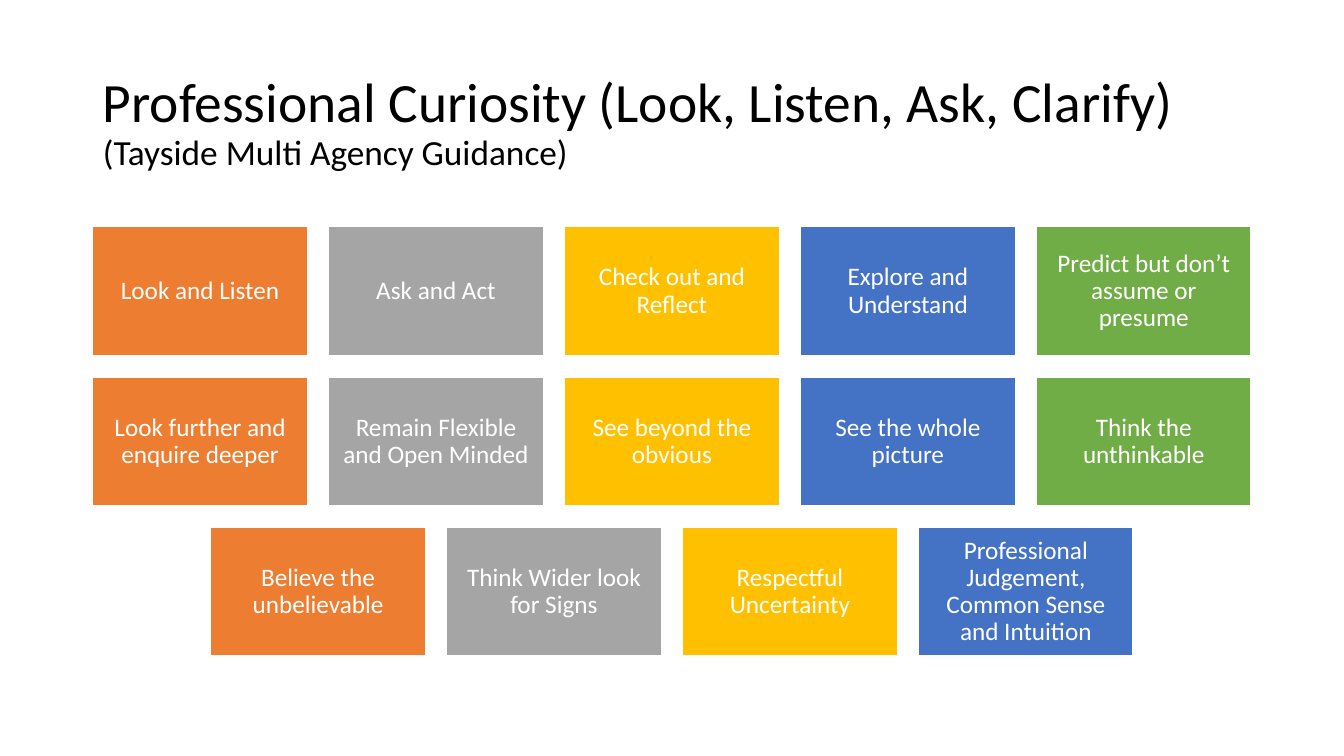
from copy import deepcopy

from pptx import Presentation
from pptx import util as u
from pptx.dml.color import RGBColor
from pptx.enum import shapes, text
from pptx.oxml.ns import qn

THEME = {
    "font": "Calibri",
    "ink": "000000",
    "paper": "FFFFFF",
    "columns": ["ED7D31", "A5A5A5", "FFC000", "4472C4", "70AD47"],
    "title": 39.6,
    "subtitle": 25.2,
    "card": 18,
}

ROWS = [
    ["Look and Listen", "Ask and Act", "Check out and Reflect",
     "Explore and Understand", "Predict but don’t assume or presume"],
    ["Look further and enquire deeper", "Remain Flexible and Open Minded",
     "See beyond the obvious", "See the whole picture", "Think the unthinkable"],
    ["Believe the unbelievable", "Think Wider look for Signs",
     "Respectful Uncertainty", "Professional Judgement, Common Sense and Intuition"],
]

LEFT, TOP = 0.92, 2.25
CARD_W, CARD_H = 2.13, 1.28
STEP_X, STEP_Y = 2.34, 1.49


def add_run(p, words, size, colour):
    r = p.add_run()
    r.text = words
    for name, value in {"name": THEME["font"], "size": u.Pt(size)}.items():
        setattr(r.font, name, value)
    r.font.color.rgb = RGBColor.from_string(colour)
    return r


def place(sp, **box):
    for name, value in box.items():
        setattr(sp, name, u.Inches(value))


prs = Presentation()
place(prs, slide_width=13.33, slide_height=7.5)
s = prs.slides.add_slide(prs.slide_layouts[5])

title = s.shapes.title
place(title, left=LEFT, top=0.61, width=11.5, height=1.24)
tf = title.text_frame
for name, value in {"auto_size": text.MSO_AUTO_SIZE.NONE, "word_wrap": True,
                    "vertical_anchor": text.MSO_ANCHOR.MIDDLE}.items():
    setattr(tf, name, value)
p = tf.paragraphs[0]
p.alignment = text.PP_ALIGN.LEFT
p.line_spacing = 0.9
r = add_run(p, "Professional Curiosity (Look, Listen, Ask, Clarify)", THEME["title"], THEME["ink"])
p.add_line_break()
p._p.find(qn("a:br")).append(deepcopy(r._r.rPr))
add_run(p, "(Tayside Multi Agency Guidance)", THEME["subtitle"], THEME["ink"])

for row, labels in enumerate(ROWS):
    indent = (len(THEME["columns"]) - len(labels)) / 2
    for col, (label, colour) in enumerate(zip(labels, THEME["columns"])):
        sp = s.shapes.add_shape(shapes.MSO_SHAPE.RECTANGLE, 0, 0, 0, 0)
        place(sp, left=LEFT + (indent + col) * STEP_X, top=TOP + row * STEP_Y,
              width=CARD_W, height=CARD_H)
        sp.shadow.inherit = False
        sp.fill.solid()
        sp.fill.fore_color.rgb = RGBColor.from_string(colour)
        sp.line.color.rgb = RGBColor.from_string(THEME["paper"])
        sp.line.width = u.Pt(1)
        tf = sp.text_frame
        place(tf, margin_left=0.07, margin_top=0.07, margin_right=0.07, margin_bottom=0.07)
        tf.word_wrap = True
        tf.vertical_anchor = text.MSO_ANCHOR.MIDDLE
        p = tf.paragraphs[0]
        p.alignment = text.PP_ALIGN.CENTER
        p.line_spacing = 0.9
        add_run(p, label, THEME["card"], THEME["paper"])

prs.save("out.pptx")
